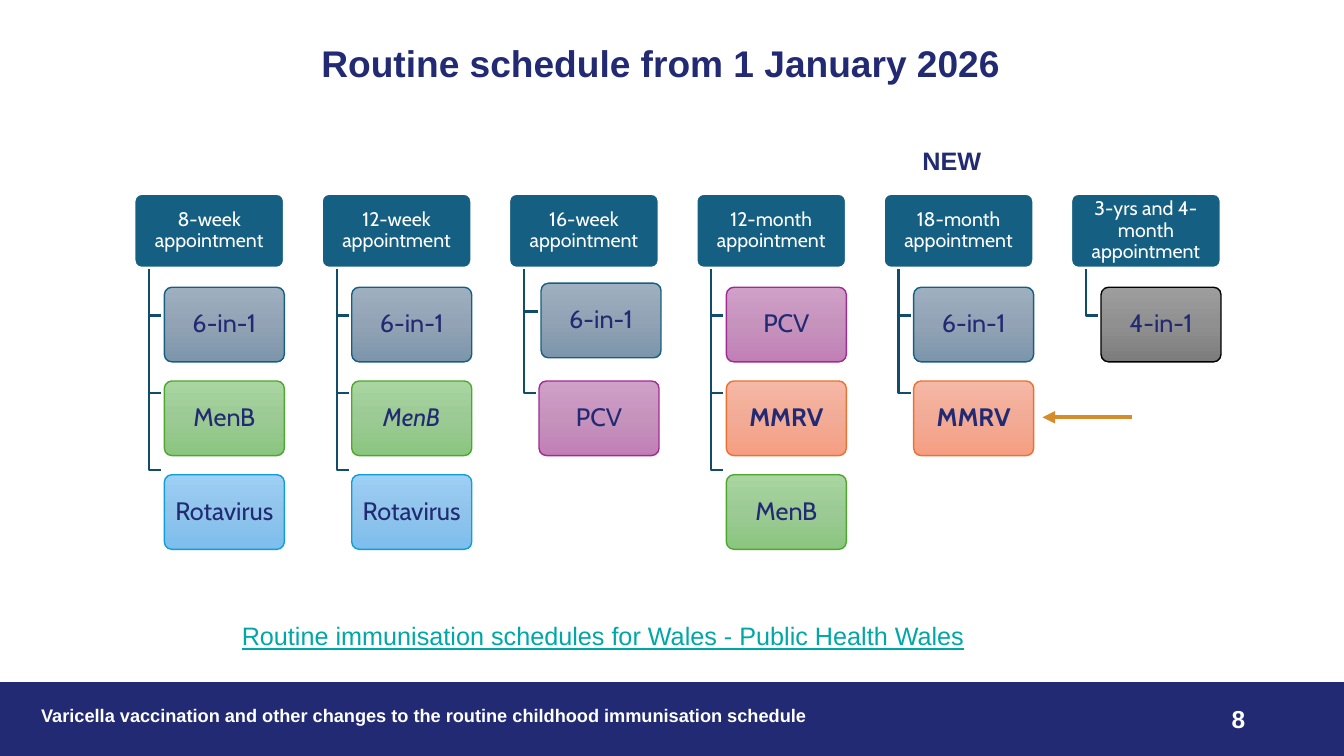
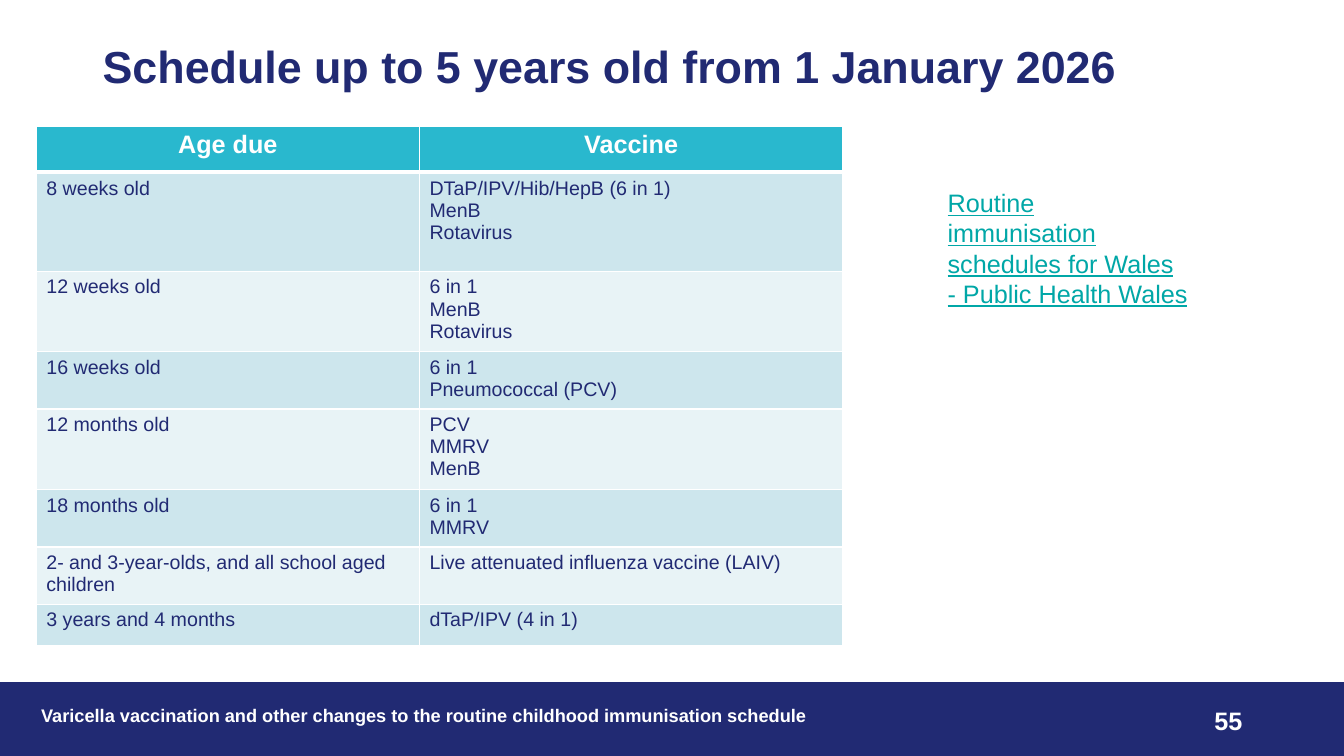
from copy import deepcopy
from dataclasses import dataclass

from lxml.etree import SubElement as Sub
from pptx import Presentation
from pptx.dml.color import RGBColor as Rgb
from pptx.enum.shapes import MSO_CONNECTOR as Conn, MSO_SHAPE as Shape
from pptx.enum.text import MSO_ANCHOR as Anchor, PP_ALIGN as Align
from pptx.oxml.ns import qn
from pptx.util import Inches, Pt


@dataclass(frozen=True)
class Theme:
    navy: str = "212A73"
    white: str = "FFFFFF"
    head: str = "156082"
    branch: str = "114D68"
    arrow: str = "D58C2B"
    link: str = "00A7A7"
    top: str = "29B8CE"
    rows: tuple = ("CDE6ED", "E8F3F6")
    font: str = "Arial"
    tree: str = "Cabin"
    small: float = 13
    body: float = 14
    large: float = 18


THEME = Theme()
WIDE, HIGH = 13.33, 7.5
PAD, TIGHT = (0.1, 0.05), (0.07, 0.03)

FOOTER = "Varicella vaccination and other changes to the routine childhood immunisation schedule"
LINK = "Routine immunisation schedules for Wales - Public Health Wales"

TINTS = {
    "6-in-1": ("156082", "9EAFBF", "91A3B4", "7C95AB"),
    "MenB": ("4EA72E", "A8D5A0", "9CCA94", "8AC680"),
    "Rotavirus": ("0F9ED5", "9ECFF5", "90C4EB", "7CBEED"),
    "PCV": ("A02B93", "D0A0C8", "C693BD", "C17FB6"),
    "MMRV": ("E97132", "F5B8A5", "F2AB96", "F59E82"),
    "4-in-1": ("000000", "9D9D9D", "909090", "7C7C7C"),
}
VISITS = [
    ("8-week appointment", ["6-in-1", "MenB", "Rotavirus"]),
    ("12-week appointment", ["6-in-1", "MenB", "Rotavirus"]),
    ("16-week appointment", ["6-in-1", "PCV"]),
    ("12-month appointment", ["PCV", "MMRV", "MenB"]),
    ("18-month appointment", ["6-in-1", "MMRV"]),
    ("3-yrs and 4-month appointment", ["4-in-1"]),
]
BOLD = {"MMRV"}
SLANT = {(1, 1)}
NUDGE = {(2, 0): (0.02, -0.04)}

HEADS = ["Age due", "Vaccine"]
COLS = [3.8, 4.2]
AGES = [
    (0.98, "8 weeks old", ["DTaP/IPV/Hib/HepB (6 in 1)", "MenB", "Rotavirus"]),
    (0.75, "12 weeks old", ["6 in 1", "MenB", "Rotavirus"]),
    (0.54, "16 weeks old", ["6 in 1", "Pneumococcal (PCV)"]),
    (0.75, "12 months old", ["PCV", "MMRV", "MenB"]),
    (0.54, "18 months old", ["6 in 1", "MMRV"]),
    (0.54, "2- and 3-year-olds, and all school aged children",
     ["Live attenuated influenza vaccine (LAIV)"]),
    (0.41, "3 years and 4 months", ["dTaP/IPV (4 in 1)"]),
]


def color(code):
    return Rgb.from_string(code)


def box(*sides):
    return [Inches(side) for side in sides]


def write(frame, lines, size, tint, align=Align.LEFT, font=THEME.font,
          bold=False, slant=False, under=False, space=None):
    for num, line in enumerate(lines):
        para = frame.add_paragraph() if num else frame.paragraphs[0]
        para.alignment = align
        if space:
            para.line_spacing = space
        run = para.add_run()
        run.text = line
        face = run.font
        face.name, face.size = font, Pt(size)
        face.bold, face.italic, face.underline = bold, slant, under
        face.color.rgb = color(tint)


def inset(frame, pad):
    frame.word_wrap = True
    frame.margin_left = frame.margin_right = Inches(pad[0])
    frame.margin_top = frame.margin_bottom = Inches(pad[1])


def label(slide, at, text, size, tint, pad=PAD, **style):
    frame = slide.shapes.add_textbox(*box(*at)).text_frame
    inset(frame, pad)
    write(frame, [text], size, tint, **style)


def block(slide, kind, at, line, width):
    shape = slide.shapes.add_shape(kind, *box(*at))
    shape.shadow.inherit = False
    shape.line.color.rgb = color(line)
    shape.line.width = Pt(width)
    return shape


def solid(part, tint):
    part.fill.solid()
    part.fill.fore_color.rgb = color(tint)


def blend(shape, tints):
    fill = shape.fill
    fill.gradient()
    fill.gradient_angle = 270
    first = next(shape._element.iter(qn("a:gs")))
    first.addnext(deepcopy(first))
    for stop, tint, place in zip(fill.gradient_stops, tints, (0, 0.5, 1)):
        stop.color.rgb = color(tint)
        stop.position = place


def base(deck, page, size, pad):
    slide = deck.slides.add_slide(deck.slide_layouts[6])
    band = block(slide, Shape.RECTANGLE, (0, 6.77, WIDE, 0.73), THEME.navy, 1)
    solid(band, THEME.navy)
    label(slide, (0.31, 6.94, 8.25, 0.4), FOOTER, THEME.small, THEME.white, bold=True)
    label(slide, (9.42, 6.95, 3, 0.4), page, size, THEME.white, pad,
          align=Align.RIGHT, bold=True)
    return slide


def title(slide, at, text, size, pad=PAD, align=Align.LEFT):
    label(slide, at, text, size, THEME.navy, pad, align=align, bold=True, space=0.9)


def link(slide, at):
    label(slide, at, LINK, THEME.large, THEME.link, under=True)


def node(slide, at, text, line, width, pad, size, tint, **style):
    shape = block(slide, Shape.ROUNDED_RECTANGLE, at, line, width)
    shape.adjustments[0] = 0.1
    frame = shape.text_frame
    inset(frame, pad)
    frame.vertical_anchor = Anchor.MIDDLE
    write(frame, [text], size, tint, Align.CENTER, THEME.tree, space=0.9, **style)
    return shape


def elbow(slide, left, top, right, low):
    path = slide.shapes.build_freeform(*box(left, top))
    path.add_line_segments([box(left, low), box(right, low)], close=False)
    shape = path.convert_to_shape()
    shape.shadow.inherit = False
    shape.fill.background()
    shape.line.color.rgb = color(THEME.branch)
    shape.line.width = Pt(1.5)


def arrow(slide, start, end):
    shape = slide.shapes.add_connector(Conn.STRAIGHT, *box(*start, *end))
    shape.line.color.rgb = color(THEME.arrow)
    shape.line.width = Pt(3)
    Sub(shape.line._get_or_add_ln(), qn("a:tailEnd"), type="triangle")
    Sub(shape._element.spPr, qn("a:effectLst"))


def chart(slide):
    for col, (visit, doses) in enumerate(VISITS):
        left = 1.33 + 1.858 * col
        head = node(slide, (left, 1.92, 1.49, 0.74), visit, THEME.white, 2,
                    (0.03, 0.02), THEME.body, THEME.white)
        solid(head, THEME.head)
        for row, dose in enumerate(doses):
            right, down = NUDGE.get((col, row), (0, 0))
            elbow(slide, left + 0.15, 2.67, left + 0.27 + right, 3.13 + 0.765 * row + down)
            line, *tints = TINTS[dose]
            at = (left + 0.3 + right, 2.85 + 0.93 * row + down, 1.19, 0.74)
            leaf = node(slide, at, dose, line, 1, (0.04, 0.03), THEME.large, THEME.navy,
                        bold=dose in BOLD, slant=(col, row) in SLANT)
            blend(leaf, tints)


def edge(cell, low):
    props = cell._tc.get_or_add_tcPr()
    for side, width in zip(("L", "R", "T", "B"), (1, 1, 1, low)):
        line = Sub(props, qn(f"a:ln{side}"), w=str(Pt(width)))
        Sub(Sub(line, qn("a:solidFill")), qn("a:srgbClr"), val=THEME.white)


def paint(cell, tint, low=1):
    edge(cell, low)
    solid(cell, tint)


def grid(slide):
    highs = [0.46] + [age[0] for age in AGES]
    at = (0.36, 1.25, sum(COLS), sum(highs))
    table = slide.shapes.add_table(len(highs), len(COLS), *box(*at)).table
    for col, wide in zip(table.columns, COLS):
        col.width = Inches(wide)
    for row, high in zip(table.rows, highs):
        row.height = Inches(high)
    for col, text in enumerate(HEADS):
        cell = table.cell(0, col)
        paint(cell, THEME.top, 3)
        write(cell.text_frame, [text], THEME.large, THEME.white, Align.CENTER, bold=True)
    for row, (high, age, doses) in enumerate(AGES):
        for col, lines in enumerate(([age], doses)):
            cell = table.cell(row + 1, col)
            paint(cell, THEME.rows[row % 2])
            write(cell.text_frame, lines, THEME.body, THEME.navy)


def main():
    deck = Presentation()
    deck.slide_width, deck.slide_height = box(WIDE, HIGH)

    slide = base(deck, "8", 17.5, TIGHT)
    title(slide, (0.04, 0.42, 13.03, 0.81), "Routine schedule from 1 January 2026",
          26.5, TIGHT, Align.CENTER)
    chart(slide)
    label(slide, (9.05, 1.39, 0.96, 0.4), "NEW", THEME.large, THEME.navy, bold=True)
    arrow(slide, (11.23, 4.14), (10.34, 4.14))
    link(slide, (2.3, 6.11, 7.4, 0.4))

    slide = base(deck, "55", THEME.large, PAD)
    title(slide, (0.92, 0.4, 11.5, 0.7), "Schedule up to 5 years old from 1 January 2026", 32)
    grid(slide)
    link(slide, (9.3, 1.81, 2.59, 1.31))

    deck.save("out.pptx")


if __name__ == "__main__":
    main()
